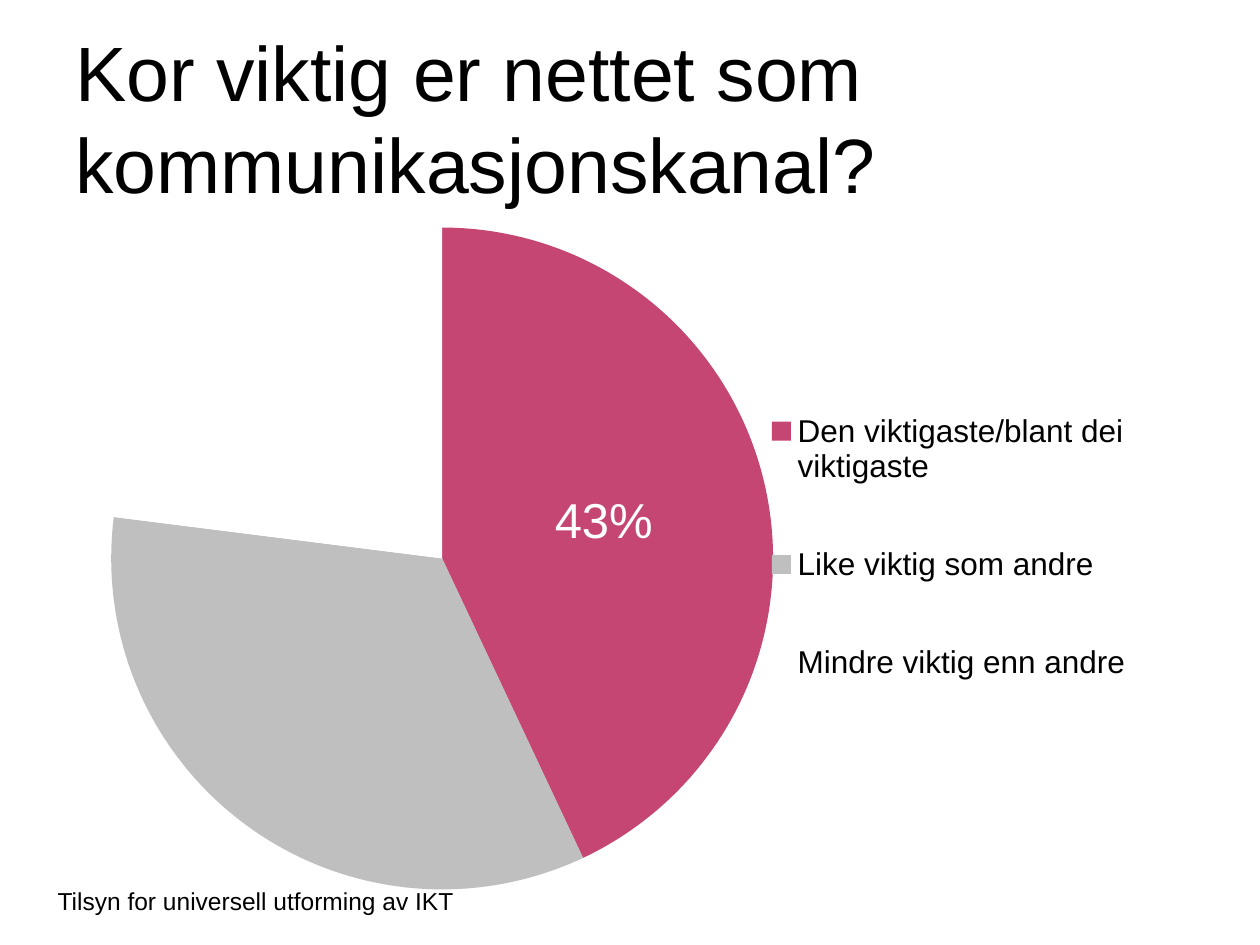
from dataclasses import dataclass

from lxml import etree
from pptx import Presentation
from pptx.chart.data import CategoryChartData
from pptx.dml.color import RGBColor
from pptx.enum.chart import XL_CHART_TYPE, XL_LABEL_POSITION, XL_LEGEND_POSITION
from pptx.enum.text import MSO_ANCHOR, PP_ALIGN
from pptx.oxml import parse_xml
from pptx.oxml.ns import nsdecls, qn
from pptx.util import Inches, Pt

PIE = XL_CHART_TYPE.PIE
LABEL_CENTER = XL_LABEL_POSITION.CENTER
LEGEND_RIGHT = XL_LEGEND_POSITION.RIGHT
MIDDLE = MSO_ANCHOR.MIDDLE
LEFT, CENTER = PP_ALIGN.LEFT, PP_ALIGN.CENTER


@dataclass(frozen=True)
class Theme:
    """Hold the font, colours and type sizes of the slide."""
    font: str = "Arial"
    text: str = "000000"
    label: str = "FFFFFF"
    slices: tuple = ("C64673", "BFBFBF", "FFFFFF")
    title_size: int = 44
    label_size: int = 28
    legend_size: int = 18
    footer_size: int = 14


THEME = Theme()
ANSWERS = {
    "Den viktigaste/blant dei viktigaste": 43,
    "Like viktig som andre": 34,
    "Mindre viktig enn andre": 23,
}


def style_font(font, size, color):
    """Apply the theme font with a size and colour."""
    font.name = THEME.font
    font.size = Pt(size)
    font.color.rgb = RGBColor.from_string(color)


def add_text(page, text, area, size, align):
    """Add a wrapped, vertically centred text box."""
    box = page.shapes.add_textbox(*map(Inches, area))
    frame = box.text_frame
    frame.word_wrap = True
    frame.vertical_anchor = MIDDLE
    para = frame.paragraphs[0]
    para.alignment = align
    span = para.add_run()
    span.text = text
    style_font(span.font, size, THEME.text)


def set_layout(parent, position, inner=False):
    """Place a chart part by fractions of the chart area."""
    for old in parent.findall(qn("c:layout")):
        parent.remove(old)
    layout = parse_xml(f"<c:layout {nsdecls('c')}><c:manualLayout/></c:layout>")
    settings = [("layoutTarget", "inner")] if inner else []
    settings += [("xMode", "edge"), ("yMode", "edge"), *zip("xywh", position)]
    for name, value in settings:
        etree.SubElement(layout[0], qn(f"c:{name}")).set("val", str(value))
    if inner:
        parent.insert(0, layout)
    else:
        parent.find(qn("c:legendPos")).addnext(layout)


def hide_label(labels, index):
    """Remove the label of one slice."""
    hidden = parse_xml(
        f'<c:dLbl {nsdecls("c")}><c:idx val="{index}"/><c:delete val="1"/></c:dLbl>'
    )
    labels._element.insert(index - 1, hidden)


def add_pie(page, answers, area):
    """Add the pie with its legend and a label on the first slice."""
    data = CategoryChartData()
    data.categories = list(answers)
    data.add_series("Series 1", list(answers.values()))
    chart = page.shapes.add_chart(PIE, *map(Inches, area), data).chart
    chart.has_title = False
    style_font(chart.font, THEME.legend_size, THEME.text)
    chart.has_legend = True
    chart.legend.position = LEGEND_RIGHT
    chart.legend.include_in_layout = False
    set_layout(chart.legend._element, (0.64, 0.19, 0.34, 0.59))
    plot = chart.plots[0]
    set_layout(plot._element.getparent(), (0, 0.005, 0.648, 0.995), inner=True)
    series = plot.series[0]
    for index, color in enumerate(THEME.slices):
        form = series.points[index].format
        form.fill.solid()
        form.fill.fore_color.rgb = RGBColor.from_string(color)
        form.line.fill.background()
    labels = series.data_labels
    labels.show_value = False
    labels.show_percentage = True
    labels.number_format = "0%"
    labels.number_format_is_linked = False
    labels.position = LABEL_CENTER
    style_font(labels.font, THEME.label_size, THEME.label)
    for index in range(1, len(answers)):
        hide_label(labels, index)


def main():
    """Build and save the slide."""
    deck = Presentation()
    deck.slide_width, deck.slide_height = Inches(10), Inches(7.5)
    page = deck.slides.add_slide(deck.slide_layouts[6])
    add_text(page, "Tilsyn for universell utforming av IKT",
             (0.29, 6.95, 3.48, 0.4), THEME.footer_size, CENTER)
    add_text(page, "Kor viktig er nettet som kommunikasjonskanal?",
             (0.5, 0.3, 9, 1.25), THEME.title_size, LEFT)
    add_pie(page, ANSWERS, (0.83, 1.78, 8.27, 5.28))
    deck.save("out.pptx")


if __name__ == "__main__":
    main()
